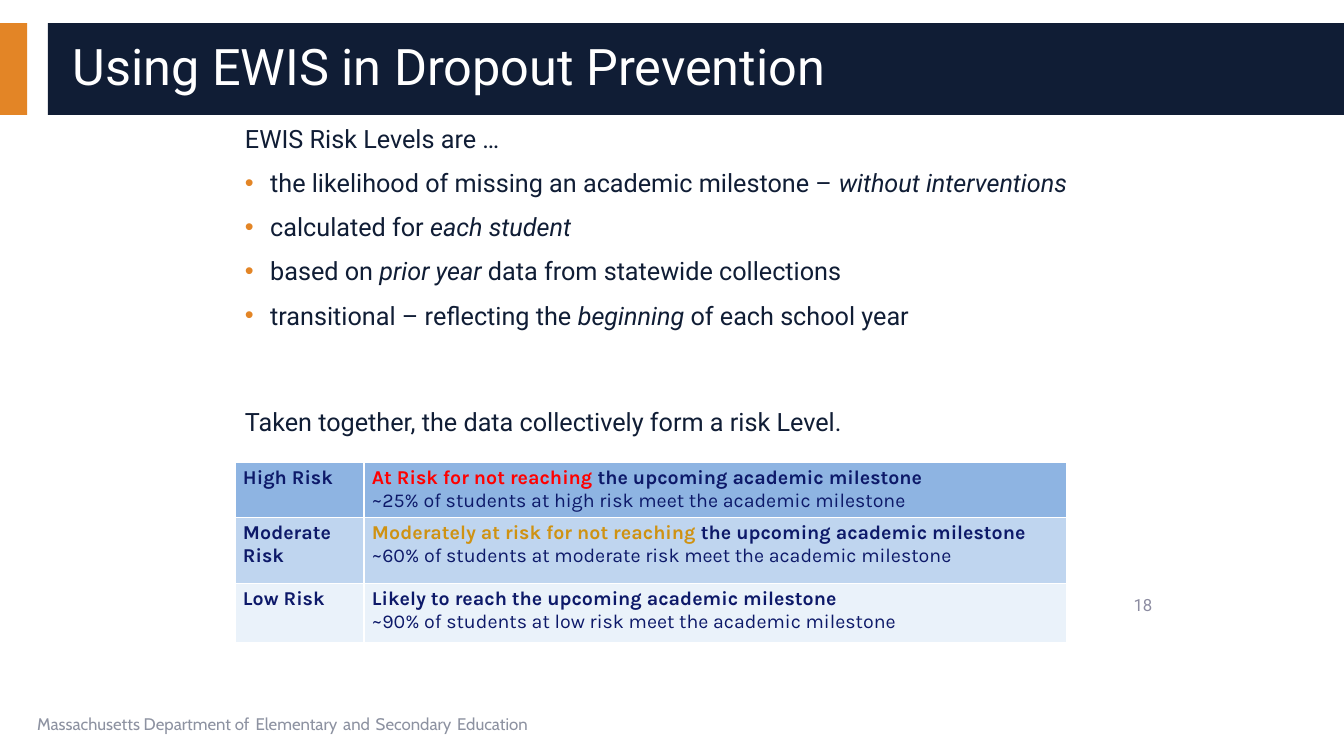
import pptx
import pptx.util
import pptx.dml.color
import pptx.enum.shapes
import pptx.enum.text
import pptx.oxml.ns
from lxml import etree

RGBColor = pptx.dml.color.RGBColor
ORANGE = RGBColor(0xE3, 0x85, 0x26)
NAVY = RGBColor(0x10, 0x1D, 0x35)
WHITE = RGBColor(0xFF, 0xFF, 0xFF)
FOOTER_GRAY = RGBColor(0x8D, 0x92, 0xA1)
NUMBER_GRAY = RGBColor(0x8C, 0x8C, 0xA1)
TABLE_BLUE = RGBColor(0x0D, 0x19, 0x69)
RED = RGBColor(0xFF, 0x00, 0x00)
GOLD = RGBColor(0xCF, 0x92, 0x12)
HIGH_FILL = RGBColor(0x8E, 0xB4, 0xE2)
MODERATE_FILL = RGBColor(0xBF, 0xD5, 0xEF)
LOW_FILL = RGBColor(0xEA, 0xF2, 0xFA)

presentation = pptx.Presentation()
presentation.slide_width = pptx.util.Inches(13.33)
presentation.slide_height = pptx.util.Inches(7.5)
COLUMN = presentation.slide_width / 100
ROW = presentation.slide_height / 100
slide = presentation.slides.add_slide(presentation.slide_layouts[1])


def box(left, top, width, height):
    return int(left * COLUMN), int(top * ROW), int(width * COLUMN), int(height * ROW)


def add_text(paragraph, text, size=18, name="Roboto", color=NAVY, bold=False, italic=False):
    run = paragraph.add_run()
    run.text = text
    run.font.size = pptx.util.Pt(size)
    run.font.name = name
    run.font.color.rgb = color
    run.font.bold = bold
    run.font.italic = italic


title = slide.shapes.title
body = slide.placeholders[1]

for left, width, color in [(0, 2.03, ORANGE), (3.57, 96.43, NAVY)]:
    band = slide.shapes.add_shape(
        pptx.enum.shapes.MSO_SHAPE.RECTANGLE, *box(left, 3.07, width, 12.13))
    band.shadow.inherit = False
    band.fill.solid()
    band.fill.fore_color.rgb = color
    band.line.fill.background()
    title.element.addprevious(band.element)

title.left, title.top, title.width, title.height = box(4.65, 4.27, 93.3, 9.87)
title.text_frame.auto_size = pptx.enum.text.MSO_AUTO_SIZE.NONE
title.text_frame.vertical_anchor = pptx.enum.text.MSO_ANCHOR.MIDDLE
heading = title.text_frame.paragraphs[0]
heading.alignment = pptx.enum.text.PP_ALIGN.LEFT
heading.line_spacing = 0.9
add_text(heading, "Using EWIS in Dropout Prevention", size=36, color=WHITE)

body.left, body.top, body.width, body.height = box(17.48, 15.6, 65.03, 74.4)
body.text_frame.auto_size = pptx.enum.text.MSO_AUTO_SIZE.NONE
body.text_frame.vertical_anchor = pptx.enum.text.MSO_ANCHOR.TOP
statements = [
    (False, 0, [("EWIS Risk Levels are …", False)]),
    (True, 10, [("the likelihood of missing an academic milestone – ", False),
                ("without interventions", True)]),
    (True, 10, [("calculated for ", False), ("each student", True)]),
    (True, 10, [("based on ", False), ("prior year ", True),
                ("data from statewide collections", False)]),
    (True, 10, [("transitional – reflecting the ", False), ("beginning ", True),
                ("of each school year", False)]),
    (False, 54, [("Taken together, the data collectively form a risk Level.", False)]),
]
for index, (bulleted, space_before, parts) in enumerate(statements):
    paragraph = body.text_frame.add_paragraph() if index else body.text_frame.paragraphs[0]
    properties = paragraph._p.get_or_add_pPr()
    indent = pptx.util.Inches(0.25) if bulleted else 0
    properties.set("marL", str(indent))
    properties.set("indent", str(-indent))
    if bulleted:
        bullet_color = etree.SubElement(properties, pptx.oxml.ns.qn("a:buClr"))
        etree.SubElement(bullet_color, pptx.oxml.ns.qn("a:srgbClr"), val=str(ORANGE))
        etree.SubElement(properties, pptx.oxml.ns.qn("a:buChar"), char="•")
    else:
        etree.SubElement(properties, pptx.oxml.ns.qn("a:buNone"))
    paragraph.space_before = pptx.util.Pt(space_before)
    for text, italic in parts:
        add_text(paragraph, text, italic=italic)

footer = slide.shapes.add_textbox(*box(2.03, 92.67, 63.3, 5.33))
footer.text_frame.word_wrap = True
footer_line = footer.text_frame.paragraphs[0]
for index, words in enumerate(
        ["Massachusetts Department of", "Elementary", "and", "Secondary", "Education"]):
    if index:
        add_text(footer_line, " ", size=18, name="Cabin", color=FOOTER_GRAY)
    add_text(footer_line, words, size=12, name="Cabin", color=FOOTER_GRAY)

risk_levels = [
    ("High Risk", 6.8, HIGH_FILL, "At Risk for not reaching ", RED,
     "the upcoming academic milestone",
     "~25% of students at high risk meet the academic milestone"),
    ("Moderate Risk", 8.67, MODERATE_FILL, "Moderately at risk for not reaching ", GOLD,
     "the upcoming academic milestone",
     "~60% of students at moderate risk meet the academic milestone"),
    ("Low Risk", 7.87, LOW_FILL, "", TABLE_BLUE,
     "Likely to reach the upcoming academic milestone",
     "~90% of students at low risk meet the academic milestone"),
]
table = slide.shapes.add_table(len(risk_levels), 2, *box(17.48, 61.2, 61.88, 23.34)).table
table.first_row = False
table.horz_banding = False
for column, share in zip(table.columns, [9.6, 52.28]):
    column.width = int(share * COLUMN)
for row, (level, share, fill, emphasis, color, outcome, rate) in zip(table.rows, risk_levels):
    row.height = int(share * ROW)
    for cell in row.cells:
        cell.fill.solid()
        cell.fill.fore_color.rgb = fill
        cell.margin_left = cell.margin_right = int(0.6 * COLUMN)
        cell.margin_top = cell.margin_bottom = int(0.53 * ROW)
    name_cell, meaning_cell = row.cells
    meaning = meaning_cell.text_frame
    first_line = meaning.paragraphs[0]
    add_text(name_cell.text_frame.paragraphs[0], level,
             size=14, name="Karla", color=TABLE_BLUE, bold=True)
    if emphasis:
        add_text(first_line, emphasis, size=14, name="Karla", color=color, bold=True)
    add_text(first_line, outcome, size=14, name="Karla", color=TABLE_BLUE, bold=True)
    add_text(meaning.add_paragraph(), rate, size=14, name="Karla", color=TABLE_BLUE)

number = slide.shapes.add_textbox(*box(82.13, 76.67, 4.35, 6.67))
number.text_frame.word_wrap = True
number.text_frame.vertical_anchor = pptx.enum.text.MSO_ANCHOR.MIDDLE
number_line = number.text_frame.paragraphs[0]
number_line.alignment = pptx.enum.text.PP_ALIGN.RIGHT
add_text(number_line, "18", size=12, color=NUMBER_GRAY)

presentation.save("out.pptx")
